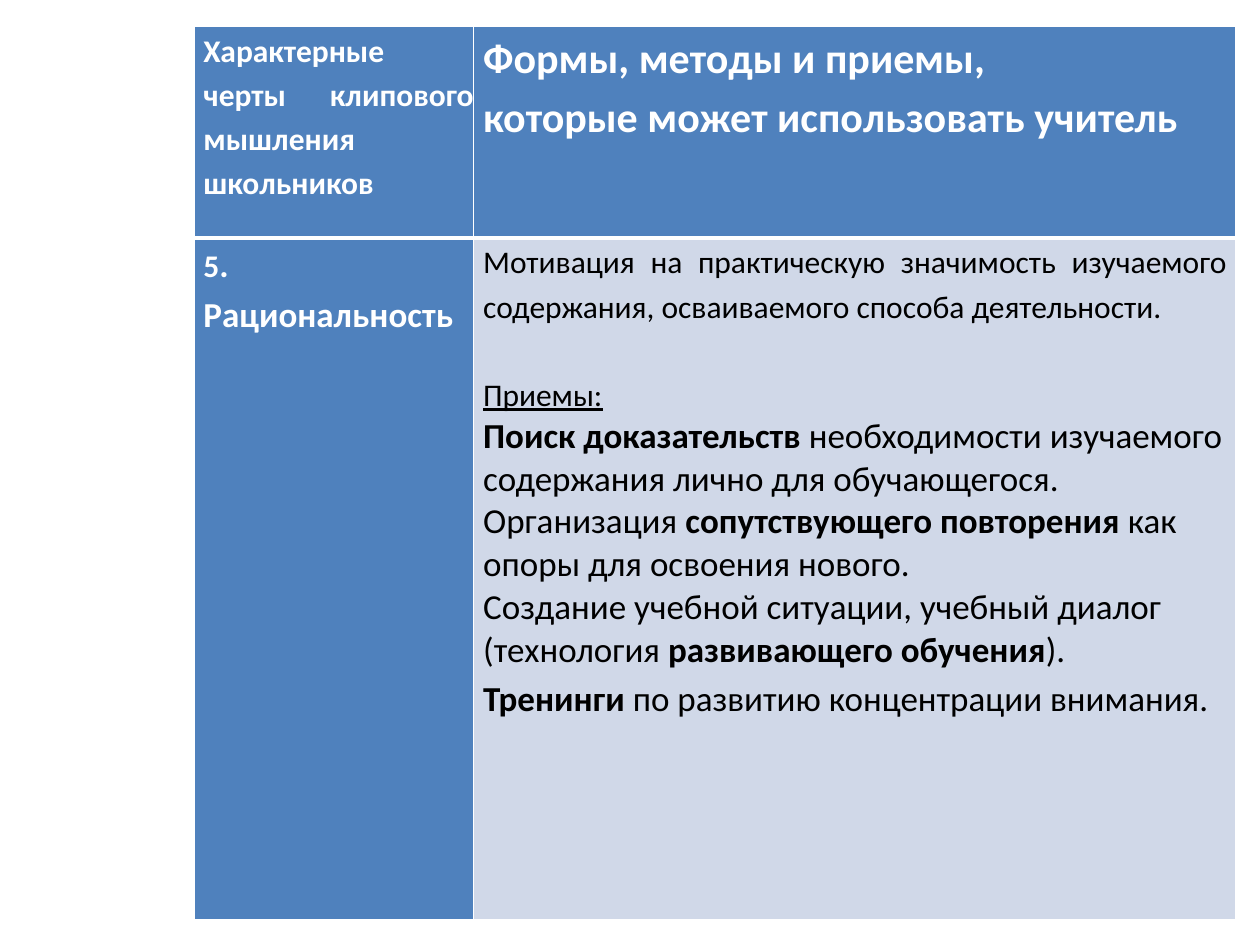
from lxml import etree
from pptx import Presentation
from pptx.dml.color import RGBColor
from pptx.enum.text import PP_ALIGN as Align
from pptx.oxml.ns import qn
from pptx.util import Cm, Pt

BLUE = RGBColor(0x4F, 0x81, 0xBD)
PALE = RGBColor(0xD0, 0xD8, 0xE8)
WHITE = RGBColor(0xFF, 0xFF, 0xFF)
BLACK = RGBColor(0, 0, 0)
FONT = "Calibri"


def add_run(paragraph, text, size=18, color=WHITE, bold=True, underline=False):
    run = paragraph.add_run()
    run.text = text
    font = run.font
    font.name, font.size = FONT, Pt(size)
    font.bold, font.underline = bold, underline
    font.color.rgb = color


def add_paragraph(cell, *parts, justified=True, before=0, **style):
    """Each part is a (text, format) pair; style holds the shared format."""
    frame = cell.text_frame
    paragraph = frame.paragraphs[0]
    if paragraph.runs:
        paragraph = frame.add_paragraph()
    if justified:
        paragraph.alignment = Align.JUSTIFY
        paragraph.line_spacing = 1.15
    if before:
        paragraph.space_before = Pt(before)
    for text, extra in parts:
        add_run(paragraph, text, **{**style, **extra})


def set_borders(cell, **widths):
    properties = cell._tc.get_or_add_tcPr()
    for side in "LRTB":
        line = etree.SubElement(properties, qn(f"a:ln{side}"),
                                w=str(Pt(widths.get(side, 1))))
        fill = etree.SubElement(line, qn("a:solidFill"))
        etree.SubElement(fill, qn("a:srgbClr"), val=str(WHITE))


def style_cell(cell, color, right=0, **widths):
    set_borders(cell, **widths)
    cell.fill.solid()
    cell.fill.fore_color.rgb = color
    cell.margin_left, cell.margin_right = Cm(0.19), Cm(right)
    cell.margin_top = cell.margin_bottom = 0


def add_grid(slide):
    frame = slide.shapes.add_table(2, 2, Cm(3.91), Cm(0.53), Cm(21.01), Cm(18.01))
    table = frame.table
    table.horz_banding = table.first_row = False
    for column, width in zip(table.columns, (5.64, 15.37)):
        column.width = Cm(width)
    for row, height in zip(table.rows, (4.27, 13.74)):
        row.height = Cm(height)
    for column, right in enumerate((0, 0.19)):
        style_cell(table.cell(0, column), BLUE, right, B=3)
        style_cell(table.cell(1, column), PALE if column else BLUE, right, T=3)
    return table


def fill_headings(table):
    add_paragraph(table.cell(0, 0),
                  ("Характерные черты клипового мышления школьников", {}))
    for line in ("Формы, методы и приемы,", "которые может использовать учитель"):
        add_paragraph(table.cell(0, 1), (line, {}), size=24)
    add_paragraph(table.cell(1, 0), ("5", {}), (". Рациональность", {"size": 20}))


def fill_methods(cell):
    plain = {"color": BLACK, "bold": False}
    strong = {"bold": True}
    add_paragraph(cell, ("Мотивация на практическую значимость изучаемого содержания, "
                         "осваиваемого способа деятельности.", {}), **plain)
    add_paragraph(cell, ("Приемы:", {"underline": True}), before=25.2, **plain)

    # Teaching techniques
    techniques = [
        [("Поиск доказательств ", strong),
         ("необходимости изучаемого содержания лично для обучающегося.", {})],
        [("Организация ", {}), ("сопутствующего повторения ", strong),
         ("как опоры для освоения нового.", {})],
        [("Создание учебной ситуации, учебный диалог (технология ", {}),
         ("развивающего обучения", strong), (").", {})],
    ]
    for parts in techniques:
        add_paragraph(cell, *parts, justified=False, size=20, **plain)
    add_paragraph(cell, ("Тренинги ", strong),
                  ("по развитию концентрации внимания.", {}), size=20, **plain)


def main():
    presentation = Presentation()
    presentation.slide_width, presentation.slide_height = Cm(25.4), Cm(19.05)
    slide = presentation.slides.add_slide(presentation.slide_layouts[6])
    table = add_grid(slide)
    fill_headings(table)
    fill_methods(table.cell(1, 1))
    presentation.save("out.pptx")


if __name__ == "__main__":
    main()
